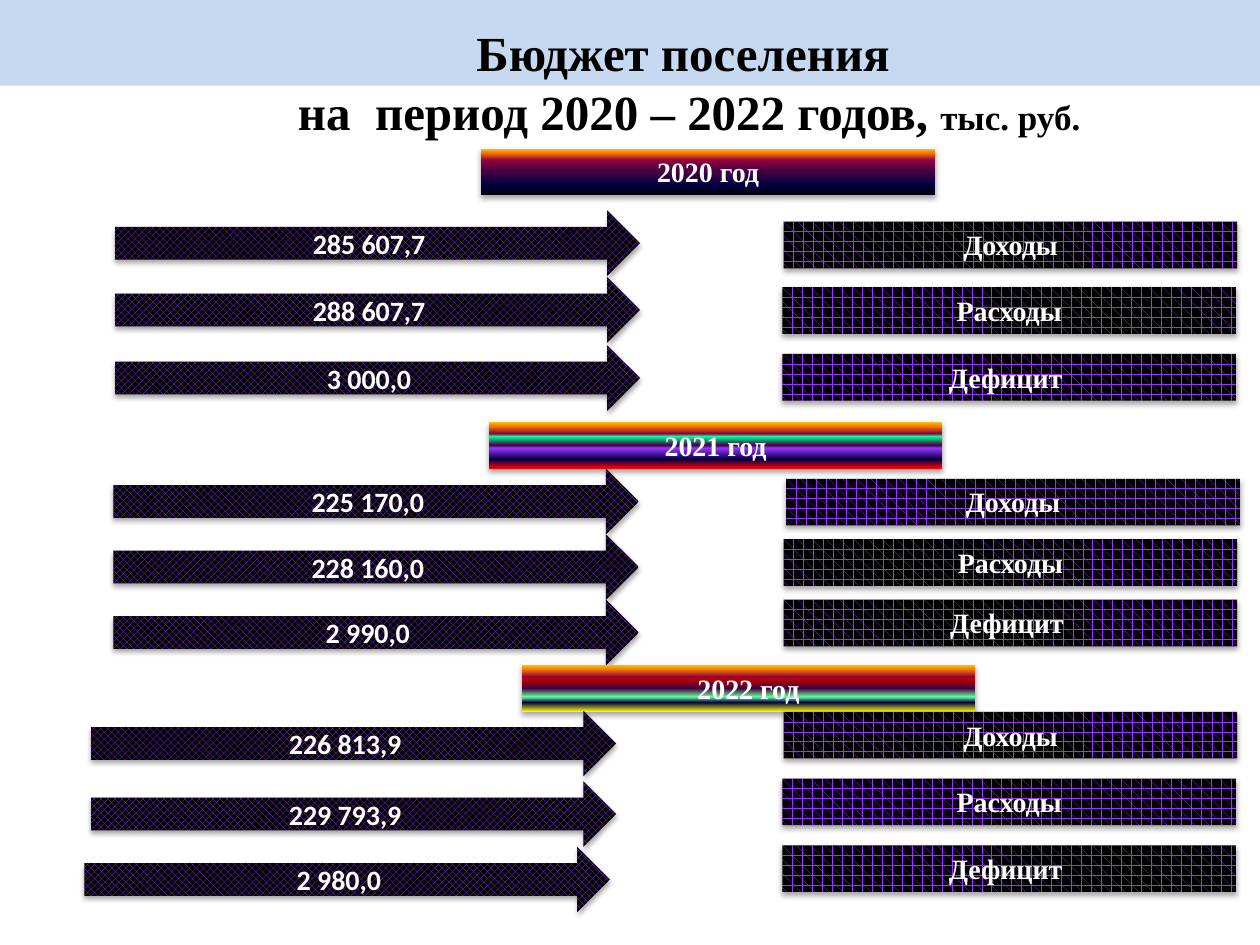
"""Build the settlement budget slide for 2020–2022."""
from lxml.etree import SubElement
from pptx import Presentation
from pptx.dml.color import RGBColor
from pptx.enum.dml import MSO_PATTERN as Pattern
from pptx.enum.shapes import MSO_SHAPE as Shape
from pptx.enum.text import MSO_ANCHOR as Anchor, MSO_AUTO_SIZE as AutoSize, PP_ALIGN as Align
from pptx.oxml import parse_xml
from pptx.oxml.ns import nsdecls, qn
from pptx.util import Inches, Pt

BLACK = RGBColor(0x00, 0x00, 0x00)
WHITE = RGBColor(0xFF, 0xFF, 0xFF)
VIOLET = RGBColor(0x99, 0x33, 0xFF)
PALE_BLUE = RGBColor(0xC6, 0xD9, 0xF1)
OUTLINE_BLUE = RGBColor(0x46, 0x7A, 0xB8)
NAVY = RGBColor(0x00, 0x00, 0x40)
PLUM = RGBColor(0x40, 0x00, 0x40)
WINE = RGBColor(0x8F, 0x00, 0x40)
ORANGE = RGBColor(0xF2, 0x73, 0x00)
AMBER = RGBColor(0xFF, 0xBF, 0x00)
RED = RGBColor(0xFF, 0x00, 0x00)
DARK_RED = RGBColor(0xC0, 0x00, 0x00)
YELLOW = RGBColor(0xFF, 0xFF, 0x00)
GREEN = RGBColor(0x00, 0xFF, 0x99)
LIGHT_GREEN = RGBColor(0x66, 0xFF, 0x99)

SERIF, SANS = "Times New Roman", "Calibri"
TITLE = [
    [("Бюджет поселения ", 28)],
    [("на  период 2020 – 2022 годов, ", 28), ("тыс. руб.", 20)],
]
CATEGORIES = ["Доходы", "Расходы", "Дефицит "]
SUNSET = {20: NAVY, 50: PLUM, 75: WINE, 90: ORANGE, 100: AMBER}
YEARS = [
    {"year": "2020 год", "banner": (3.82, 1.18), "stops": {0: BLACK},
     "amounts": ["285 607,7", "288 607,7", "3 000,0"],
     "arrows": [(0.91, 1.67), (0.91, 2.2), (0.91, 2.74)],
     "labels": [(6.22, 1.76), (6.21, 2.28), (6.21, 2.81)]},
    {"year": "2021 год", "banner": (3.88, 3.35), "stops": {0: RED, 44: VIOLET, 69: GREEN},
     "amounts": ["225 170,0", "228 160,0", "2 990,0"],
     "arrows": [(0.9, 3.72), (0.9, 4.24), (0.9, 4.76)],
     "labels": [(6.24, 3.8), (6.22, 4.28), (6.22, 4.76)]},
    {"year": "2022 год", "banner": (4.14, 5.28), "stops": {0: YELLOW, 32: LIGHT_GREEN, 71: DARK_RED},
     "amounts": ["226 813,9", "229 793,9", "2 980,0"],
     "arrows": [(0.72, 5.64), (0.72, 6.2), (0.67, 6.72)],
     "labels": [(6.22, 5.65), (6.21, 6.18), (6.21, 6.71)]},
]
BAR_SIZE = (3.6, 0.37)
ARROW_SIZE = (4.17, 0.52)
BAR_FRAME = {"word_wrap": True, "vertical_anchor": Anchor.TOP, "auto_size": AutoSize.SHAPE_TO_FIT_TEXT}
ARROW_FRAME = {"word_wrap": True, "vertical_anchor": Anchor.MIDDLE}


def set_format(target, values):
    for name, value in values.items():
        setattr(target, name, value)


def add_run(paragraph, text, font, size, color):
    paragraph.alignment = Align.CENTER
    run = paragraph.add_run()
    run.text = text
    set_format(run.font, {"name": font, "size": Pt(size), "bold": True})
    run.font.color.rgb = color
    return run


def add_block(slide, kind, place, size):
    block = slide.shapes.add_shape(kind, *map(Inches, place + size))
    block.shadow.inherit = False
    block.line.fill.background()
    return block


def add_shadow(block):
    effects = block._element.spPr.find(qn("a:effectLst"))
    shadow = SubElement(effects, qn("a:outerShdw"), blurRad=str(Pt(3.1)), dist=str(Pt(1.8)),
                        dir="5400000", rotWithShape="0")
    color = SubElement(shadow, qn("a:srgbClr"), val=str(BLACK))
    SubElement(color, qn("a:alpha"), val="35000")


def add_caption(slide, kind, place, size, text, font, frame):
    block = add_block(slide, kind, place, size)
    add_shadow(block)
    set_format(block.text_frame, frame)
    add_run(block.text_frame.paragraphs[0], text, font, 16, WHITE)
    return block


def fill_pattern(block, pattern):
    block.fill.patterned()
    block.fill.pattern = pattern
    block.fill.fore_color.rgb = VIOLET
    block.fill.back_color.rgb = BLACK


def fill_gradient(block, stops):
    block.fill.gradient()
    block.fill.gradient_angle = 90
    stop_list = block._element.spPr.find(qn("a:gradFill")).find(qn("a:gsLst"))
    for stop in list(stop_list):
        stop_list.remove(stop)
    for position, color in sorted(stops.items()):
        stop = SubElement(stop_list, qn("a:gs"), pos=str(position * 1000))
        SubElement(stop, qn("a:srgbClr"), val=str(color))


def add_title(slide):
    frame = slide.shapes.add_textbox(*map(Inches, (1.14, 0.13, 8.66, 1.04))).text_frame
    set_format(frame, {"word_wrap": True, "auto_size": AutoSize.SHAPE_TO_FIT_TEXT})
    for index, line in enumerate(TITLE):
        paragraph = frame.add_paragraph() if index else frame.paragraphs[0]
        for text, size in line:
            run = add_run(paragraph, text, SERIF, size, BLACK)
            run.font._element.insert(0, parse_xml(
                f'<a:ln {nsdecls("a")} w="{Pt(0.83)}"><a:solidFill>'
                f'<a:srgbClr val="{OUTLINE_BLUE}"/></a:solidFill></a:ln>'))


def main():
    deck = Presentation()
    set_format(deck, {"slide_width": Inches(10), "slide_height": Inches(7.5)})
    slide = deck.slides.add_slide(deck.slide_layouts[6])
    header = add_block(slide, Shape.RECTANGLE, (0, 0), (10, 0.68))
    header.fill.solid()
    header.fill.fore_color.rgb = PALE_BLUE
    add_title(slide)
    for budget in YEARS:
        banner = add_caption(slide, Shape.RECTANGLE, budget["banner"], BAR_SIZE,
                             budget["year"], SERIF, BAR_FRAME)
        fill_gradient(banner, SUNSET | budget["stops"])
        for amount, place in zip(budget["amounts"], budget["arrows"]):
            arrow = add_caption(slide, Shape.RIGHT_ARROW, place, ARROW_SIZE, amount, SANS, ARROW_FRAME)
            fill_pattern(arrow, Pattern.LARGE_CHECKER_BOARD)
        for category, place in zip(CATEGORIES, budget["labels"]):
            label = add_caption(slide, Shape.RECTANGLE, place, BAR_SIZE, category, SERIF, BAR_FRAME)
            fill_pattern(label, Pattern.PLAID)
    deck.save("out.pptx")


if __name__ == "__main__":
    main()
